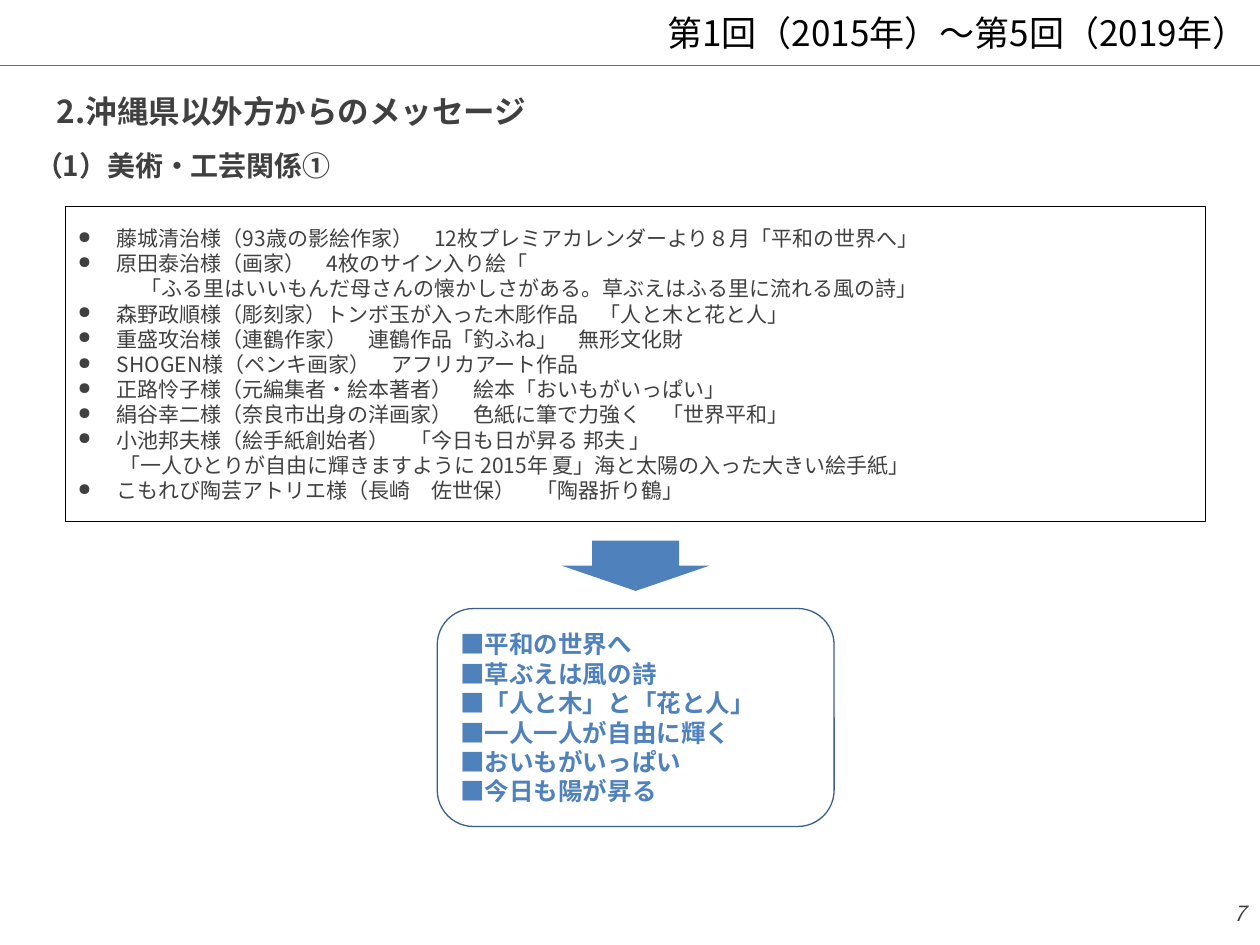
from lxml import etree
from pptx import Presentation
from pptx.dml.color import RGBColor
from pptx.enum.shapes import MSO_CONNECTOR, MSO_SHAPE
from pptx.enum.text import MSO_ANCHOR, MSO_AUTO_SIZE, PP_ALIGN
from pptx.oxml.ns import qn
from pptx.util import Inches, Pt

LEFT, RIGHT = PP_ALIGN.LEFT, PP_ALIGN.RIGHT
TOP, MIDDLE = MSO_ANCHOR.TOP, MSO_ANCHOR.MIDDLE
NO_FIT = MSO_AUTO_SIZE.NONE
RECT, ROUND = MSO_SHAPE.RECTANGLE, MSO_SHAPE.ROUNDED_RECTANGLE
ARROW, STRAIGHT = MSO_SHAPE.DOWN_ARROW, MSO_CONNECTOR.STRAIGHT

TITLE = "第1回（2015年）～第5回（2019年）"
HEAD = "2.沖縄県以外方からのメッセージ"
TOPIC = "（1）美術・工芸関係①"
PAGE = "7"
BULLET, HANG = "●", 0.31
GIFTS = [
    ("藤城清治様（93歳の影絵作家）　12枚プレミアカレンダーより８月「平和の世界へ」", 0),
    ("原田泰治様（画家）　4枚のサイン入り絵「", 0),
    ("「ふる里はいいもんだ母さんの懐かしさがある。草ぶえはふる里に流れる風の詩」", 0.5),
    ("森野政順様（彫刻家）トンボ玉が入った木彫作品　「人と木と花と人」", 0),
    ("重盛攻治様（連鶴作家）　連鶴作品「釣ふね」　無形文化財", 0),
    ("SHOGEN様（ペンキ画家）　アフリカアート作品", 0),
    ("正路怜子様（元編集者・絵本著者）　絵本「おいもがいっぱい」", 0),
    ("絹谷幸二様（奈良市出身の洋画家）　色紙に筆で力強く　「世界平和」", 0),
    ("小池邦夫様（絵手紙創始者）　「今日も日が昇る 邦夫 」", 0),
    ("「一人ひとりが自由に輝きますように 2015年 夏」海と太陽の入った大きい絵手紙」", 0.33),
    ("こもれび陶芸アトリエ様（長崎　佐世保）　「陶器折り鶴」", 0),
]
THEMES = [
    "■平和の世界へ",
    "■草ぶえは風の詩",
    "■「人と木」と「花と人」",
    "■一人一人が自由に輝く",
    "■おいもがいっぱい",
    "■今日も陽が昇る",
]
FONT = "Noto Sans CJK JP"
COLORS = {"ink": "404040", "black": "000000", "blue": "4F81BD",
          "edge": "3A5F8C", "rule": "BF4C48"}


def color(name):
    return RGBColor.from_string(COLORS[name])


def place(shape, box):
    shape.left, shape.top, shape.width, shape.height = map(Inches, box)
    return shape


def indent(para, left=0, hang=0, mark=None):
    props = para._p.get_or_add_pPr()
    props.set("marL", str(Inches(left)))
    props.set("indent", str(Inches(-hang)))
    if mark:
        etree.SubElement(props, qn("a:buSzPct")).set("val", "80000")
        etree.SubElement(props, qn("a:buChar")).set("char", mark)
    else:
        etree.SubElement(props, qn("a:buNone"))


def write(shape, lines, size=12, ink="ink", bold=False, italic=False,
          align=LEFT, anchor=TOP):
    frame = shape.text_frame
    frame.word_wrap = True
    frame.auto_size = NO_FIT
    frame.vertical_anchor = anchor
    frame.text = "\n".join(lines)
    for para in frame.paragraphs:
        para.alignment = align
        para.line_spacing = Pt(size * 1.2)
        para.space_before = Pt(0)
        for run in para.runs:
            font = run.font
            font.name, font.size = FONT, Pt(size)
            font.bold, font.italic = bold, italic
            font.color.rgb = color(ink)
            east = etree.SubElement(font._element, qn("a:ea"))
            east.set("typeface", FONT)
    return frame.paragraphs


def draw(slide, kind, box, fill=None, line=None):
    shape = slide.shapes.add_shape(kind, *map(Inches, box))
    shape.shadow.inherit = False
    if fill:
        shape.fill.solid()
        shape.fill.fore_color.rgb = color(fill)
    else:
        shape.fill.background()
    if line:
        shape.line.color.rgb = color(line)
        shape.line.width = Pt(0.75)
    else:
        shape.line.fill.background()
    return shape


def main():
    deck = Presentation()
    deck.slide_width, deck.slide_height = Inches(10), Inches(7.5)
    slide = deck.slides.add_slide(deck.slide_layouts[1])
    shapes = slide.shapes

    rule = shapes.add_connector(STRAIGHT, 0, Inches(0.52), Inches(10), Inches(0.52))
    rule.line.color.rgb = color("rule")
    rule.line.width = Pt(0.75)
    etree.SubElement(rule._element.spPr, qn("a:effectLst"))

    title = place(shapes.title, (0, 0, 10, 0.52))
    write(title, [TITLE], size=20, ink="black", align=RIGHT, anchor=MIDDLE)
    head = place(slide.placeholders[1], (0.35, 0.68, 4.69, 0.4))
    indent(write(head, [HEAD], size=18, bold=True)[0])
    topic = shapes.add_textbox(*map(Inches, (0.18, 1.13, 5.24, 0.39)))
    write(topic, [TOPIC], size=16, bold=True)

    panel = draw(slide, RECT, (0.52, 1.64, 9.05, 2.5), line="black")
    paras = write(panel, [text for text, _ in GIFTS], anchor=MIDDLE)
    for para, (_, left) in zip(paras, GIFTS):
        if left:
            indent(para, left)
        else:
            indent(para, HANG, HANG, BULLET)

    arrow = draw(slide, ARROW, (4.46, 4.29, 1.17, 0.4), fill="blue")
    arrow.adjustments[0] = 0.59
    arrow.adjustments[1] = 0.5
    card = draw(slide, ROUND, (3.47, 4.83, 3.15, 1.73), line="edge")
    write(card, THEMES, size=14, ink="blue", bold=True, anchor=MIDDLE)

    page = shapes.add_textbox(*map(Inches, (7.65, 7.1, 2.33, 0.4)))
    write(page, [PAGE], italic=True, align=RIGHT)
    deck.save("out.pptx")


if __name__ == "__main__":
    main()
